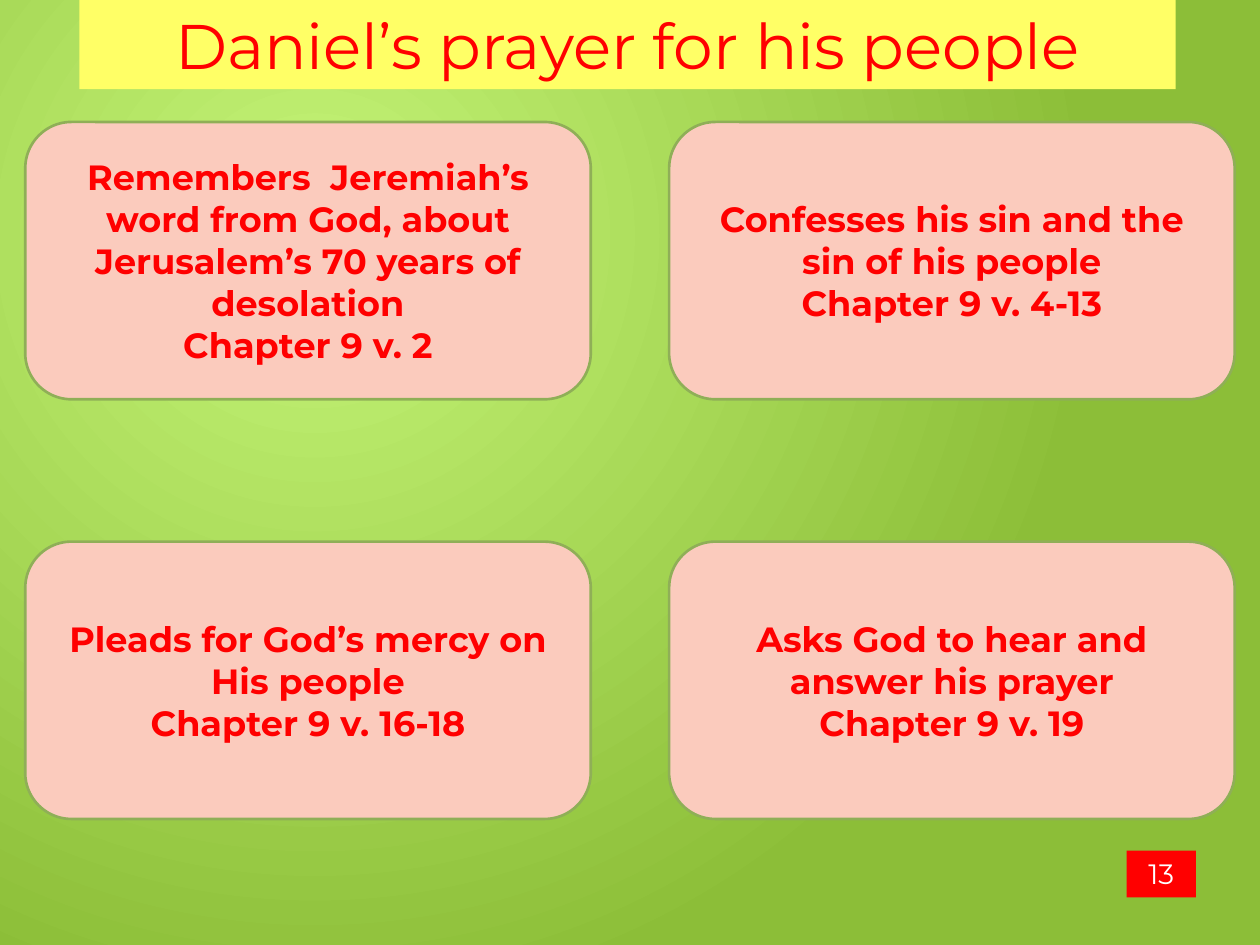
from dataclasses import dataclass

from lxml import etree
from pptx import Presentation
from pptx.dml.color import RGBColor
from pptx.enum import shapes, text
from pptx.oxml import ns
from pptx.util import Cm, Pt


@dataclass(frozen=True)
class Theme:
    font: str = "Montserrat"
    glow: str = "C5F578"
    green: str = "8CBE38"
    yellow: str = "FFFF66"
    pink: str = "FBCBBD"
    edge: str = "8FAF57"
    red: str = "FF0000"
    white: str = "FFFFFF"
    head: int = 36
    body: int = 20
    small: int = 16


@dataclass(frozen=True)
class Card:
    point: str
    verse: str


THEME = Theme()
WIDE, HIGH = 25.4, 19.05
CARD_W, CARD_H = 11.4, 5.59
SIDE, TOP, STEP = 0.51, 2.46, 8.46
CARDS = [
    Card("Remembers  Jeremiah’s word from God, about Jerusalem’s 70 years of desolation",
         "Chapter 9 v. 2"),
    Card("Confesses his sin and the sin of his people", "Chapter 9 v. 4-13"),
    Card("Pleads for God’s mercy on His people", "Chapter 9 v. 16-18"),
    Card("Asks God to hear and answer his prayer", "Chapter 9 v. 19"),
]


def rgb(code: str) -> RGBColor:
    return RGBColor.from_string(code)


def place(shape, left: float, top: float, width: float, height: float) -> None:
    shape.left, shape.top = Cm(left), Cm(top)
    shape.width, shape.height = Cm(width), Cm(height)


def paint(shape, code: str) -> None:
    shape.fill.solid()
    shape.fill.fore_color.rgb = rgb(code)


def write(shape, words: str, size: int, code: str, bold: bool = False,
          anchor=text.MSO_ANCHOR.TOP) -> None:
    frame = shape.text_frame
    frame.text = words
    frame.word_wrap = True
    frame.auto_size = text.MSO_AUTO_SIZE.NONE
    frame.vertical_anchor = anchor
    for para in frame.paragraphs:
        para.alignment = text.PP_ALIGN.CENTER
        for run in para.runs:
            run.font.name = THEME.font
            run.font.size = Pt(size)
            run.font.bold = bold
            run.font.color.rgb = rgb(code)


def add_glow(slide) -> None:
    fill = slide.background.fill
    fill.gradient()
    for stop, code in zip(fill.gradient_stops, (THEME.glow, THEME.green)):
        stop.color.rgb = rgb(code)
    grad = slide.element.find(".//" + ns.qn("a:gradFill"))
    line = grad.find(ns.qn("a:lin"))
    ring = etree.Element(ns.qn("a:path"), path="circle")
    etree.SubElement(ring, ns.qn("a:fillToRect"),
                     l="50000", t="50000", r="100000", b="100000")
    grad.replace(line, ring)


def add_title(slide) -> None:
    title = slide.shapes.title
    place(title, 1.6, 0, 22.1, 1.8)
    paint(title, THEME.yellow)
    write(title, "Daniel’s prayer for his people", THEME.head, THEME.red)


def add_card(slide, card: Card, left: float, top: float) -> None:
    box = slide.shapes.add_shape(
        shapes.MSO_SHAPE.FLOWCHART_ALTERNATE_PROCESS, 0, 0, 0, 0)
    place(box, left, top, CARD_W, CARD_H)
    box.shadow.inherit = False
    paint(box, THEME.pink)
    box.line.color.rgb = rgb(THEME.edge)
    box.line.width = Pt(1.5)
    write(box, f"{card.point}\n{card.verse}", THEME.body, THEME.red,
          True, text.MSO_ANCHOR.MIDDLE)


def add_page(slide) -> None:
    page = slide.shapes.add_textbox(0, 0, 0, 0)
    place(page, 22.71, 17.15, 1.4, 0.94)
    paint(page, THEME.red)
    write(page, "13", THEME.small, THEME.white)


def main() -> None:
    deck = Presentation()
    deck.slide_width, deck.slide_height = Cm(WIDE), Cm(HIGH)
    slide = deck.slides.add_slide(deck.slide_layouts[5])
    add_glow(slide)
    add_title(slide)
    for spot, card in enumerate(CARDS):
        row, col = divmod(spot, 2)
        left = SIDE + col * (WIDE - 2 * SIDE - CARD_W)
        add_card(slide, card, left, TOP + row * STEP)
    add_page(slide)
    deck.save("out.pptx")


if __name__ == "__main__":
    main()
